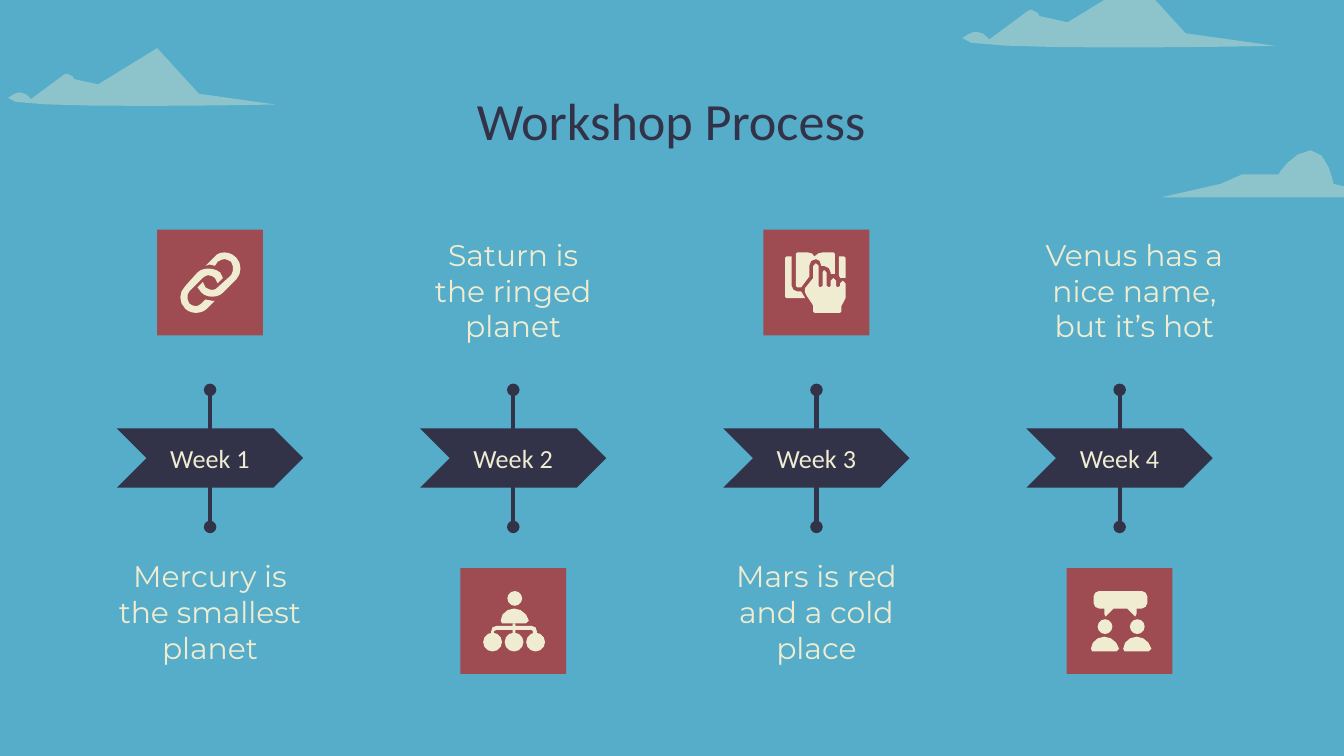
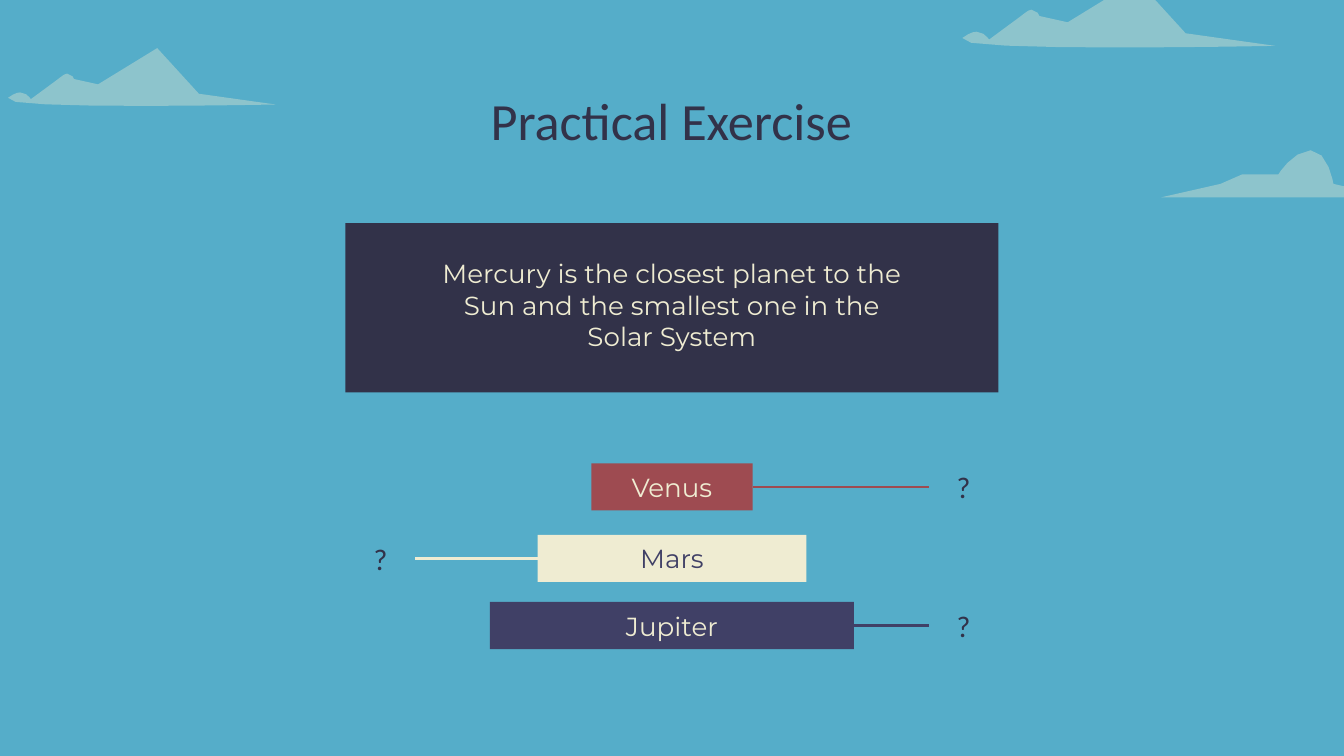
from lxml import etree
from math import dist
from pptx import Presentation
from pptx.dml.color import RGBColor
from pptx.enum.shapes import MSO_CONNECTOR, MSO_SHAPE
from pptx.enum.text import MSO_ANCHOR, MSO_AUTO_SIZE, PP_ALIGN
from pptx.oxml.ns import qn
from pptx.util import Cm, Pt

RECT, CHEVRON, OVAL = MSO_SHAPE.RECTANGLE, MSO_SHAPE.CHEVRON, MSO_SHAPE.OVAL
STRAIGHT = MSO_CONNECTOR.STRAIGHT
TOP, MIDDLE, BOTTOM = MSO_ANCHOR.TOP, MSO_ANCHOR.MIDDLE, MSO_ANCHOR.BOTTOM
CENTER, NO_FIT = PP_ALIGN.CENTER, MSO_AUTO_SIZE.NONE

COLORS = {"sky": "55ADC9", "ink": "323249", "cream": "EFECD2",
          "brick": "9E4B51", "indigo": "404066"}
HEADING, BODY = "Calibri", "Montserrat"
INSET = Cm(0.25)
GRID = Cm(2.54) // 100  # one step of the outline coordinates
TITLE_LAYOUT, COMPARISON_LAYOUT = 1, 4

# Outlines: M move, L line, C cubic curve
LONG_CLOUD = (
    "M 117 0 L 73 27 L 55 23 C 55 23 54 19 50 19 C 48 19 46 21 42 24 "
    "L 23 38 C 23 38 20 33 15 33 C 13 33 10 34 6 37 C 0 42 53 43 106 43 "
    "C 155 43 205 42 205 42 L 148 34")
ROUND_CLOUD = (
    "M 111 0 C 97 1 87 18 87 18 L 60 18 L 44 25 L 0 35 "
    "L 171 35 L 128 25 C 128 25 124 0 111 0")
UPPER_LINK = (
    "M 50 17 C 47 17 44 18 42 21 L 36 27 L 39 26 L 43 27 L 45 24 "
    "C 47 23 48 22 50 22 C 52 22 53 23 55 24 C 57 27 57 31 55 34 L 45 43 "
    "C 44 44 43 45 41 45 C 39 45 38 44 36 43 L 34 39 L 30 43 L 33 47 "
    "C 35 49 38 50 41 50 C 44 50 47 49 49 47 L 59 37 "
    "C 63 33 63 25 59 21 C 56 18 53 17 50 17")
LOWER_LINK = (
    "M 38 29 C 35 29 32 30 30 32 L 21 42 C 16 47 16 54 21 59 C 23 61 26 62 29 62 "
    "C 32 62 35 61 37 59 L 43 53 L 41 53 L 36 52 L 33 55 "
    "C 32 56 30 57 29 57 C 27 57 25 56 24 55 C 22 52 22 48 24 46 L 34 36 "
    "C 35 35 37 34 38 34 C 40 34 42 35 43 36 L 45 40 L 49 36 L 47 32 "
    "C 45 30 41 29 38 29")
HAND = (
    "M 39 25 L 37 27 L 37 36 L 33 41 C 30 43 30 47 32 49 L 36 55 L 37 57 L 37 61 "
    "L 38 62 L 57 62 L 58 61 L 58 57 L 61 51 L 61 40 L 59 38 L 57 40 L 57 42 "
    "L 55 43 L 54 42 L 54 38 L 52 36 L 50 38 L 50 42 L 49 43 L 47 42 L 47 32 "
    "L 45 30 L 44 32 L 44 42 L 42 43 L 41 42 L 41 27")
RIGHT_COVER = "M 56 20 L 56 34 L 57 36 L 61 36 L 61 21 L 60 20"
LEFT_COVER = (
    "M 17 20 L 16 21 L 16 50 L 17 51 L 31 51 L 28 46 L 25 46 "
    "C 23 46 21 44 21 42 L 21 20")
PAGES = (
    "M 25 17 L 24 18 L 24 42 L 25 43 L 28 43 L 34 35 L 34 27 C 34 24 36 22 39 22 "
    "C 41 22 43 24 43 27 L 45 27 C 48 27 50 30 50 32 L 50 33 L 53 33 L 53 18 "
    "L 52 17 L 44 17 C 41 17 40 18 38 20 C 37 18 35 17 33 17")
BRACKET = (
    "M 39 41 L 39 43 L 27 43 L 24 44 L 23 47 L 23 49 L 25 49 L 25 47 L 27 46 "
    "L 39 46 L 39 49 L 41 49 L 41 46 L 53 46 L 54 47 L 54 49 L 57 49 L 57 47 "
    "L 56 44 L 53 43 L 41 43 L 41 41")
BUBBLE = (
    "M 24 17 C 22 17 20 19 20 21 L 20 26 C 20 28 22 30 24 30 L 28 30 L 28 34 "
    "L 29 36 L 35 30 L 45 30 L 51 36 L 52 34 L 52 30 L 56 30 C 58 30 60 28 60 26 "
    "L 60 21 C 60 19 58 17 56 17")
BUST = "M 28 51 C 23 51 18 55 18 60 L 19 62 L 37 62 L 39 60 C 38 55 33 51 28 51"

# Icons: outlines with their shift, and discs with corner and size
LINK_ICON = ([(UPPER_LINK, 0, 0), (LOWER_LINK, 0, 0)], [])
BOOK_ICON = ([(part, 0, 0) for part in (HAND, RIGHT_COVER, LEFT_COVER, PAGES)], [])
TEAM_ICON = ([(BUST, 12, -21), (BRACKET, 0, 0)],
             [(35, 17, 11), (17, 48, 14), (33, 48, 14), (49, 48, 14)])
TALK_ICON = ([(BUBBLE, 0, 0), (BUST, 0, 0), (BUST, 24, 0)],
             [(23, 38, 11), (47, 38, 11)])

# Week, text, icon, shift of the text in cm
WEEKS = [("Week 1", "Mercury is the smallest planet", LINK_ICON, 0),
         ("Week 2", "Saturn is the ringed planet", TEAM_ICON, 0),
         ("Week 3", "Mars is red and a cold place", BOOK_ICON, 0),
         ("Week 4", "Venus has a nice name, but it’s hot", TALK_ICON, 0.28)]

# Planet, bar colour, text colour, bar width and top in cm, side of the answer
PLANETS = [("Venus", "brick", "cream", 3.05, 0, "right"),
           ("Mars", "cream", "indigo", 5.08, 1.35, "left"),
           ("Jupiter", "indigo", "cream", 6.88, 2.62, "right")]


def color(key):
    return RGBColor.from_string(COLORS[key])


def paint(shape, key):
    shape.shadow.inherit = False
    shape.fill.solid()
    shape.fill.fore_color.rgb = color(key)
    shape.line.fill.background()
    return shape


def write(shape, text, size, font, key, anchor=MIDDLE):
    frame = shape.text_frame
    frame.word_wrap = True
    frame.auto_size = NO_FIT
    frame.vertical_anchor = anchor
    frame.margin_left = frame.margin_right = INSET
    frame.margin_top = frame.margin_bottom = INSET
    paragraph = frame.paragraphs[0]
    paragraph.alignment = CENTER
    paragraph.space_before = Pt(0)
    properties = paragraph._p.get_or_add_pPr()
    properties.set("marL", "0")
    properties.set("indent", "0")
    etree.SubElement(properties, qn("a:buNone"))
    run = paragraph.add_run()
    run.text = text
    run.font.size = Pt(size)
    run.font.name = font
    run.font.bold = False
    run.font.color.rgb = color(key)


def place(shape, left, top, width, height):
    shape.left, shape.top = Cm(left), Cm(top)
    shape.width, shape.height = Cm(width), Cm(height)


def add_block(shapes, kind, left, top, width, height, key):
    return paint(shapes.add_shape(kind, Cm(left), Cm(top), Cm(width), Cm(height)), key)


def add_line(shapes, start, end, key, width, round_ends=False):
    x1, y1, x2, y2 = (Cm(value) for value in (*start, *end))
    line = shapes.add_connector(STRAIGHT, x1, y1, x2, y2)
    line.line.color.rgb = color(key)
    line.line.width = Pt(width)
    if round_ends:
        for end_tag in ("a:headEnd", "a:tailEnd"):
            etree.SubElement(line.line._ln, qn(end_tag), type="oval")
    etree.SubElement(line.element.spPr, qn("a:effectLst"))


def outline_points(outline):
    """Turn an outline into points, with more of them on longer curves."""
    tokens = iter(outline.split())
    points = []
    for command in tokens:
        values = [float(next(tokens)) for _ in range(6 if command == "C" else 2)]
        if command != "C":
            points.append(tuple(values))
            continue
        corners = [points[-1], *zip(values[::2], values[1::2])]
        steps = min(4, 2 + int(dist(corners[0], corners[-1]) // 8))
        for step in range(1, steps + 1):
            t = step / steps
            weights = ((1 - t) ** 3, 3 * t * (1 - t) ** 2, 3 * t * t * (1 - t), t ** 3)
            points.append(tuple(sum(w * corner[axis] for w, corner in zip(weights, corners))
                                for axis in (0, 1)))
    return points


def add_outline(shapes, outline, left, top, key, scale=1):
    points = [(left + x * scale * GRID, top + y * scale * GRID)
              for x, y in outline_points(outline)]
    builder = shapes.build_freeform(*points[0])
    builder.add_line_segments(points[1:], close=True)
    return paint(builder.convert_to_shape(), key)


def draw_sky(slide):
    for outline, left, top, scale in [(ROUND_CLOUD, 21.95, 2.84, 1),
                                      (LONG_CLOUD, 0, 0.91, 1),
                                      (LONG_CLOUD, 18.01, -0.38, 1.17)]:
        cloud = add_outline(slide.shapes, outline, Cm(left), Cm(top), "cream", scale)
        tint = cloud.element.spPr.find(".//" + qn("a:srgbClr"))
        etree.SubElement(tint, qn("a:alpha"), val="37000")


def start_slide(prs, layout, title):
    """Add a slide with its sky and title; return it with its body placeholders."""
    slide = prs.slides.add_slide(prs.slide_layouts[layout])
    draw_sky(slide)
    heading, *bodies = slide.placeholders
    place(heading, 3.12, 1.5, 19.13, 1.6)
    write(heading, title, 28, HEADING, "ink", BOTTOM)
    return slide, bodies


def draw_icon_tile(slide, icon, left, top, size):
    add_block(slide.shapes, RECT, left, top, size, size, "brick")
    symbol = slide.shapes.add_group_shape().shapes
    outlines, discs = icon
    for outline, dx, dy in outlines:
        add_outline(symbol, outline, Cm(left) + dx * GRID, Cm(top) + dy * GRID, "cream")
    for x, y, disc_size in discs:
        paint(symbol.add_shape(OVAL, Cm(left) + x * GRID, Cm(top) + y * GRID,
                               disc_size * GRID, disc_size * GRID), "cream")


def draw_week(slide, body, week, left, top, icon_on_top):
    """One column of the timeline."""
    name, text, icon, shift = week
    width, text_width, tile = 3.52, 4.06, 2.0
    middle = left + width / 2
    # Arrow on its pin
    marker = slide.shapes.add_group_shape().shapes
    add_line(marker, (middle, top + 3.15), (middle, top + 5.74), "ink", 2.25, True)
    arrow = add_block(marker, CHEVRON, left, top + 3.88, width, 1.12, "ink")
    arrow.adjustments[0] = 0.5
    write(arrow, name, 14, HEADING, "cream")
    # Icon and text on opposite sides
    tile_top, text_top = (0.12, 6.07) if icon_on_top else (6.52, 0)
    draw_icon_tile(slide, icon, middle - tile / 2, top + tile_top, tile)
    place(body, middle - text_width / 2 + shift, top + text_top, text_width, 2.72)
    write(body, text, 16, BODY, "cream", TOP)


def build_process(prs):
    slide, bodies = start_slide(prs, COMPARISON_LAYOUT, "Workshop Process")
    for index, (body, week) in enumerate(zip(bodies, WEEKS)):
        draw_week(slide, body, week, 2.21 + index * 5.73, 4.22, index % 2 == 0)


def draw_statement(slide, body, left, top, width, height):
    panel = add_block(slide.shapes, RECT, left, top, width, height, "ink")
    body.element.addprevious(panel.element)  # panel goes behind its text
    place(body, left + 1.54, top + 0.4, width - 3.08, height - 0.8)
    write(body, "Mercury is the closest planet to the Sun and the smallest one "
                "in the Solar System", 14, BODY, "cream", TOP)


def draw_options(slide, left, top, width):
    bar_height, answer_width = 0.89, 1.32
    for planet, fill, ink, bar_width, drop, side in PLANETS:
        bar_left = left + (width - bar_width) / 2
        bar_top = top + drop
        bar = add_block(slide.shapes, RECT, bar_left, bar_top, bar_width, bar_height, fill)
        write(bar, planet, 14, BODY, ink)
        # Answer at the edge of the box, joined to its bar
        if side == "right":
            answer_left = left + width - answer_width
            start, end = bar_left + bar_width, answer_left
        else:
            answer_left = left
            start, end = bar_left, left + answer_width
        answer = slide.shapes.add_textbox(Cm(answer_left), Cm(bar_top),
                                          Cm(answer_width), Cm(bar_height))
        write(answer, "?", 16, HEADING, "ink")
        line_y = bar_top + bar_height / 2
        add_line(slide.shapes, (start, line_y), (end, line_y), fill, 1.5)


def build_exercise(prs):
    slide, (body,) = start_slide(prs, TITLE_LAYOUT, "Practical Exercise")
    draw_statement(slide, body, 6.53, 4.22, 12.34, 3.2)
    draw_options(slide, 6.53, 8.76, 12.34)


def main():
    prs = Presentation()
    prs.slide_width, prs.slide_height = Cm(25.4), Cm(14.29)
    backdrop = prs.slide_master.background.fill
    backdrop.solid()
    backdrop.fore_color.rgb = color("sky")
    build_process(prs)
    build_exercise(prs)
    prs.save("out.pptx")


if __name__ == "__main__":
    main()
